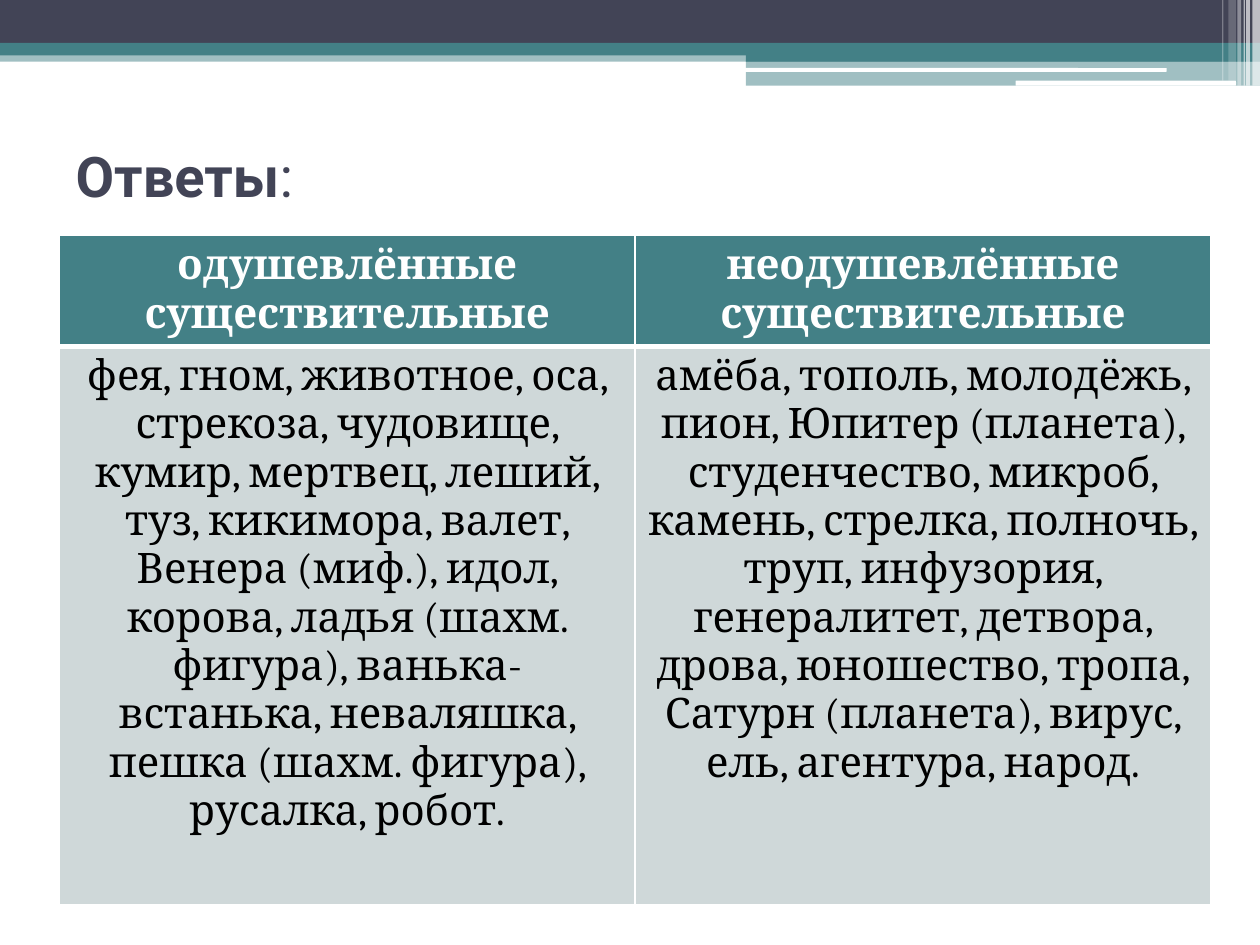
import pptx
import pptx.util
import pptx.dml.color
import pptx.enum.shapes
import pptx.enum.text
import pptx.oxml
import pptx.oxml.ns
from pptx.util import Inches

RGBColor = pptx.dml.color.RGBColor
WHITE = RGBColor(0xFF, 0xFF, 0xFF)
BLACK = RGBColor(0, 0, 0)
NAVY = RGBColor(0x42, 0x44, 0x56)
TEAL = RGBColor(0x43, 0x80, 0x86)
PALE = RGBColor(0xCF, 0xD8, 0xD9)

RECT = pptx.enum.shapes.MSO_SHAPE.RECTANGLE
ROUND = pptx.enum.shapes.MSO_SHAPE.ROUNDED_RECTANGLE
ALIGN = pptx.enum.text.PP_ALIGN
ANCHOR = pptx.enum.text.MSO_ANCHOR

BANDS = [
    (RECT, 0, 0.4, 10, 0.09, TEAL, 50),
    (RECT, 0, 0, 10, 0.34, NAVY, 100),
    (RECT, 0, 0.34, 10, 0.1, TEAL, 100),
    (RECT, 5.92, 0.39, 4.08, 0.1, TEAL, 100),
    (RECT, 5.92, 0.48, 4.08, 0.2, TEAL, 50),
    (ROUND, 5.91, 0.54, 3.35, 0.03, WHITE, 100),
    (ROUND, 8.06, 0.64, 1.75, 0.04, WHITE, 100),
]
STRIPES = [
    (9.94, 0.06, 0.68, 65),
    (9.89, 0.03, 0.68, 65),
    (9.87, 0.01, 0.68, 60),
    (9.82, 0.03, 0.68, 40),
    (9.75, 0.06, 0.64, 20),
    (9.7, 0.01, 0.64, 30),
]
HEADS = ["одушевлённые существительные", "неодушевлённые существительные"]
WORDS = [
    "фея, гном, животное, оса, стрекоза, чудовище, кумир, мертвец, леший, "
    "туз, кикимора, валет, Венера (миф.), идол, корова, ладья (шахм. фигура), "
    "ванька-встанька, неваляшка, пешка (шахм. фигура), русалка, робот.",
    "амёба, тополь, молодёжь, пион, Юпитер (планета), студенчество, микроб, "
    "камень, стрелка, полночь, труп, инфузория, генералитет, детвора, дрова, "
    "юношество, тропа, Сатурн (планета), вирус, ель, агентура, народ.",
]


def set_all(obj, formats):
    """Set every attribute named in the dict of format values."""
    for name, value in formats.items():
        setattr(obj, name, value)


def add_run(p, text, color, **formats):
    """Append a formatted run to a paragraph."""
    r = p.add_run()
    r.text = text
    set_all(r.font, formats)
    r.font.color.rgb = color


def add_bar(s, kind, left, top, width, height, color, opacity):
    """Add a borderless bar with the given opacity in percent."""
    sp = s.shapes.add_shape(
        kind, Inches(left), Inches(top), Inches(width), Inches(height))
    sp.shadow.inherit = False
    sp.line.fill.background()
    sp.fill.solid()
    sp.fill.fore_color.rgb = color
    if opacity < 100:
        clr = sp.fill._xPr.find(".//" + pptx.oxml.ns.qn("a:srgbClr"))
        clr.append(pptx.oxml.parse_xml(
            f'<a:alpha {pptx.oxml.ns.nsdecls("a")} val="{opacity * 1000}"/>'))


def add_header_band(s, left, top):
    """Draw the decorative bars from the given corner."""
    for kind, x, y, width, height, color, opacity in BANDS:
        add_bar(s, kind, left + x, top + y, width, height, color, opacity)
    for x, width, height, opacity in STRIPES:
        add_bar(s, RECT, left + x, top, width, height, WHITE, opacity)


def add_title(s, left, top, width, height):
    """Move the title placeholder to its box and fill it."""
    sp = s.shapes.title
    set_all(sp, {"left": Inches(left), "top": Inches(top),
                 "width": Inches(width), "height": Inches(height)})
    tf = sp.text_frame
    set_all(tf, {"word_wrap": True, "vertical_anchor": ANCHOR.MIDDLE,
                 "auto_size": pptx.enum.text.MSO_AUTO_SIZE.NONE,
                 "margin_bottom": Inches(0.39)})
    p = tf.paragraphs[0]
    p.alignment = ALIGN.LEFT
    for text, bold in (("Ответы", True), (":", False)):
        add_run(p, text, NAVY, name="Roboto", size=pptx.util.Pt(32), bold=bold)


def set_borders(cell, widths):
    """Give a cell white borders with a width in points for each side."""
    tcPr = cell._tc.get_or_add_tcPr()
    for side in "LRTB":
        tcPr.append(pptx.oxml.parse_xml(
            f'<a:ln{side} {pptx.oxml.ns.nsdecls("a")} '
            f'w="{pptx.util.Pt(widths.get(side, 1))}"><a:solidFill>'
            f'<a:srgbClr val="{WHITE}"/></a:solidFill></a:ln{side}>'))


def add_answers(s, left, top, width, row_heights):
    """Add the two-column table of answers."""
    tbl = s.shapes.add_table(
        2, 2, Inches(left), Inches(top), Inches(width),
        Inches(sum(row_heights))).table
    for row, height in zip(tbl.rows, row_heights):
        row.height = Inches(height)
    rows = [(HEADS, TEAL, WHITE, True, {"B": 3}),
            (WORDS, PALE, BLACK, False, {"T": 3})]
    for i, (texts, fill, color, bold, widths) in enumerate(rows):
        for j, text in enumerate(texts):
            cell = tbl.cell(i, j)
            set_borders(cell, widths)
            cell.fill.solid()
            cell.fill.fore_color.rgb = fill
            p = cell.text_frame.paragraphs[0]
            p.alignment = ALIGN.CENTER
            add_run(p, text, color, name="Cambria",
                    size=pptx.util.Pt(24), bold=bold)


def main():
    """Build the slide and save it."""
    prs = pptx.Presentation()
    set_all(prs, {"slide_width": Inches(10), "slide_height": Inches(7.5)})
    s = prs.slides.add_slide(prs.slide_layouts[5])
    add_header_band(s, 0, 0)
    add_title(s, 0.5, 0.78, 9, 1.56)
    add_answers(s, 0.47, 1.87, 9.14, (0.88, 4.43))
    prs.save("out.pptx")


if __name__ == "__main__":
    main()
